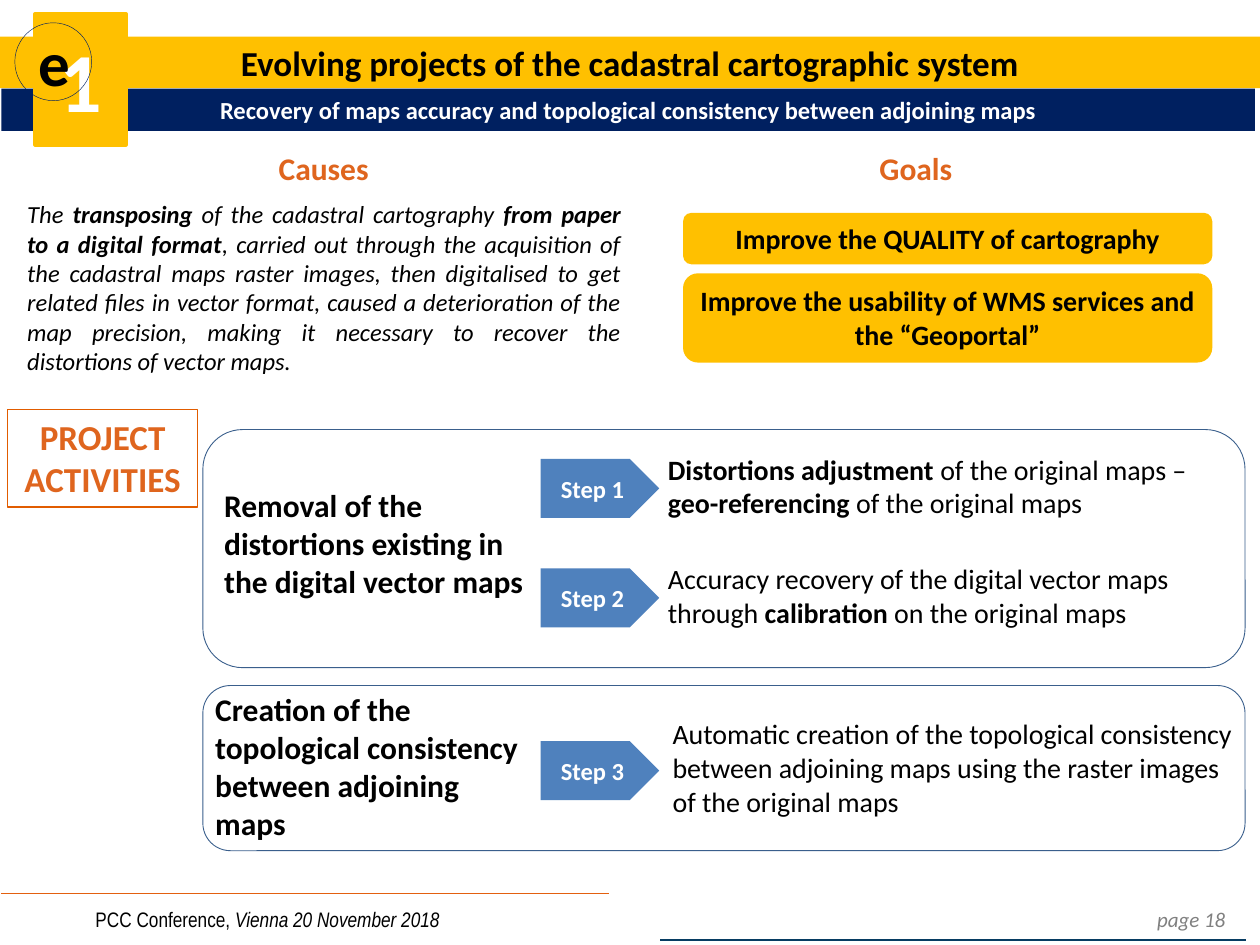
from lxml import etree
from pptx import Presentation
from pptx import util as u
from pptx.dml.color import RGBColor
from pptx.enum import shapes, text
from pptx.oxml.ns import qn

COLOURS = {
    "black": "000000", "white": "FFFFFF", "grey": "808080",
    "yellow": "FFC000", "navy": "002060", "blue": "4F81BD",
    "frame": "3A5F8C", "orange": "DF651E", "label line": "E15C00",
    "left rule": "E3600F", "right rule": "073C62",
}
ALIGN = text.PP_ALIGN
SHAPE = shapes.MSO_SHAPE
TOP, MIDDLE = text.MSO_ANCHOR.TOP, text.MSO_ANCHOR.MIDDLE
BOLD, ITALIC = "b", "i"


def colour(name):
    return RGBColor.from_string(COLOURS[name])


def write(shape, paragraphs, size, ink="black", align=ALIGN.LEFT, anchor=TOP,
          font="Calibri", after=0, wrap=True):
    """Fill a shape with paragraphs, each a list of (text, style) runs."""
    frame = shape.text_frame
    frame.auto_size = text.MSO_AUTO_SIZE.NONE
    frame.word_wrap = wrap
    frame.vertical_anchor = anchor
    for index, runs in enumerate(paragraphs):
        paragraph = frame.add_paragraph() if index else frame.paragraphs[0]
        paragraph.alignment = align
        paragraph.space_before = u.Pt(0)
        paragraph.space_after = u.Pt(after)
        for words, style in runs:
            run = paragraph.add_run()
            run.text = words
            run.font.name = font
            run.font.size = u.Pt(size)
            run.font.bold = BOLD in style
            run.font.italic = ITALIC in style
            run.font.color.rgb = colour(ink)


def add_text(slide, place, paragraphs, size, **options):
    box = slide.shapes.add_textbox(*map(u.Cm, place))
    write(box, paragraphs, size, **options)


def add_box(slide, kind, place, fill=None, line=None, width=0.5):
    shape = slide.shapes.add_shape(kind, *map(u.Cm, place))
    shape.shadow.inherit = False
    if fill:
        shape.fill.solid()
        shape.fill.fore_color.rgb = colour(fill)
    else:
        shape.fill.background()
    if line:
        shape.line.color.rgb = colour(line)
        shape.line.width = u.Pt(width)
    else:
        shape.line.fill.background()
    return shape


def add_rule(slide, left, right, y, ink):
    rule = slide.shapes.add_connector(
        shapes.MSO_CONNECTOR.STRAIGHT, u.Cm(left), u.Cm(y), u.Cm(right), u.Cm(y))
    rule.line.color.rgb = colour(ink)
    rule.line.width = u.Pt(1)
    etree.SubElement(rule._element.spPr, qn("a:effectLst"))


def move(shape, place):
    shape.left, shape.top, shape.width, shape.height = map(u.Cm, place)


def remove_bullets(shape):
    for paragraph in shape.text_frame.paragraphs:
        properties = paragraph._p.get_or_add_pPr()
        properties.set("marL", "0")
        properties.set("indent", "0")
        etree.SubElement(properties, qn("a:buNone"))


def add_header(slide):
    title = slide.shapes.title
    move(title, (0, 0.74, 25.4, 1.04))
    title.fill.solid()
    title.fill.fore_color.rgb = colour("yellow")
    write(title, [[("Evolving projects of the cadastral cartographic system", BOLD)]],
          20, align=ALIGN.CENTER, anchor=MIDDLE)
    subtitle = add_box(slide, SHAPE.RECTANGLE, (0.03, 1.79, 25.27, 0.85), "navy")
    write(subtitle, [[("Recovery of maps accuracy and topological consistency "
                       "between adjoining maps", BOLD)]],
          14, "white", ALIGN.CENTER)
    # Numbered badge with its lettered circle
    badge = add_box(slide, SHAPE.RECTANGLE, (0.71, 0.28, 1.83, 2.64),
                    "yellow", "yellow", 2)
    write(badge, [[("1", BOLD)]], 48, "white", ALIGN.CENTER, MIDDLE)
    circle = add_box(slide, SHAPE.OVAL, (0.3, 0.46, 1.55, 1.57),
                     line="navy", width=0.25)
    write(circle, [[("e", BOLD)]], 36, align=ALIGN.CENTER, anchor=MIDDLE)


def add_causes(slide):
    add_text(slide, (4.52, 2.87, 4.01, 1.02), [[("Causes", BOLD)]], 18,
             ink="orange", align=ALIGN.CENTER)
    add_text(slide, (0.3, 3.89, 12.47, 3.84), [[
        ("The ", ITALIC), ("transposing", BOLD + ITALIC),
        (" of the cadastral cartography ", ITALIC),
        ("from paper to a digital format", BOLD + ITALIC),
        (", carried out through the acquisition of the cadastral maps raster "
         "images, then digitalised to get related files in vector format, caused "
         "a deterioration of the map precision, making it necessary to recover "
         "the distortions of vector maps.", ITALIC)]], 14, align=ALIGN.JUSTIFY)


def add_goals(slide):
    add_text(slide, (17.48, 2.87, 1.98, 1.02), [[("Goals", BOLD)]], 18,
             ink="orange", wrap=False)
    goals = [
        (4.29, 1.04, "Improve the QUALITY of cartography"),
        (5.51, 1.8, "Improve the usability of WMS services and the “Geoportal”"),
    ]
    for top, height, words in goals:
        goal = add_box(slide, SHAPE.ROUNDED_RECTANGLE,
                       (13.77, top, 10.67, height), "yellow")
        write(goal, [[(words, BOLD)]], 16, align=ALIGN.CENTER)


def add_activities(slide):
    label = add_box(slide, SHAPE.RECTANGLE, (0.15, 8.26, 3.84, 1.96),
                    line="label line", width=0.75)
    write(label, [[("PROJECT ACTIVITIES", BOLD)]], 20, "orange", ALIGN.CENTER)
    for top, height in ((8.66, 4.8), (13.82, 3.33)):
        add_box(slide, SHAPE.ROUNDED_RECTANGLE, (4.09, top, 21.01, height),
                line="frame")
    # Activity names
    add_text(slide, (4.27, 9.68, 6.63, 2.57),
             [[("Removal of the distortions existing in the digital vector maps",
                BOLD)]], 18)
    add_text(slide, (4.09, 13.79, 6.81, 3.33),
             [[("Creation of the topological consistency between adjoining maps",
                BOLD)]], 18)
    # Steps and their descriptions
    for number, top in enumerate((9.25, 11.46, 14.94), start=1):
        step = add_box(slide, SHAPE.PENTAGON, (10.9, top, 2.39, 1.19), "blue")
        write(step, [[(f"Step {number}", BOLD)]], 14, "white", ALIGN.CENTER, MIDDLE)
    body = slide.placeholders[1]
    move(body, (13.21, 8.99, 11.68, 3.84))
    write(body, [
        [("Distortions adjustment ", BOLD), ("of the original maps – ", ""),
         ("geo-referencing", BOLD), (" of the original maps", "")],
        [("Accuracy recovery of the digital vector maps through ", ""),
         ("calibration", BOLD), (" on the original maps", "")],
    ], 16, after=24)
    remove_bullets(body)
    add_text(slide, (13.31, 14.33, 11.81, 2.31),
             [[("Automatic creation of the topological consistency between "
                "adjoining maps using the raster images of the original maps", "")]],
             16)


def add_footer(slide):
    add_rule(slide, 0.03, 12.27, 18.01, "left rule")
    add_rule(slide, 13.31, 25.12, 18.95, "right rule")
    add_text(slide, (1.52, 18.16, 7.75, 0.76),
             [[("PCC Conference, ", ""), ("Vienna 20 November 2018", ITALIC)]],
             12, align=ALIGN.CENTER, font="Arial Narrow", wrap=False)
    add_text(slide, (22.73, 18.16, 2.57, 0.76), [[("page 18", ITALIC)]],
             12, ink="grey", align=ALIGN.CENTER)


def main():
    presentation = Presentation()
    presentation.slide_width, presentation.slide_height = u.Cm(25.4), u.Cm(19.05)
    slide = presentation.slides.add_slide(presentation.slide_layouts[1])
    add_header(slide)
    add_causes(slide)
    add_goals(slide)
    add_activities(slide)
    add_footer(slide)
    presentation.save("out.pptx")


if __name__ == "__main__":
    main()
